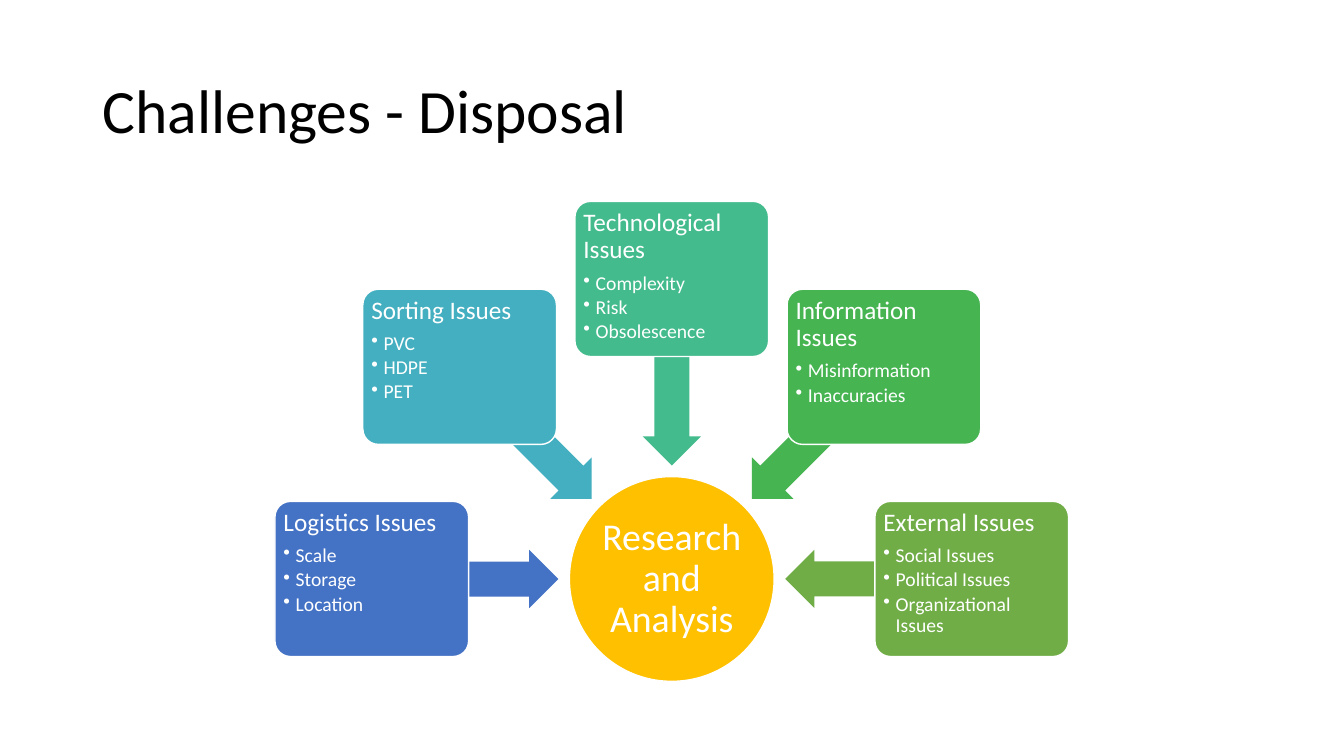
from math import cos, radians, sin

from lxml.etree import SubElement
from pptx import Presentation
from pptx.dml.color import RGBColor
from pptx.enum.shapes import MSO_SHAPE
from pptx.enum.text import MSO_ANCHOR, MSO_AUTO_SIZE, PP_ALIGN
from pptx.oxml.ns import qn
from pptx.util import Cm, Pt

FONT = "Calibri"
BLACK = RGBColor(0x00, 0x00, 0x00)
WHITE = RGBColor(0xFF, 0xFF, 0xFF)
GOLD = RGBColor(0xFF, 0xC0, 0x00)
BLUE = RGBColor(0x44, 0x72, 0xC4)
TEAL = RGBColor(0x43, 0xAF, 0xC0)
MINT = RGBColor(0x43, 0xBB, 0x8D)
GREEN = RGBColor(0x45, 0xB4, 0x51)
OLIVE = RGBColor(0x70, 0xAD, 0x47)

# Lengths in centimetres
HUB_X, HUB_Y = 16.93, 14.59
HUB_SIZE = 5.16
BOX_WIDTH, BOX_HEIGHT, BOX_RADIUS = 4.88, 3.91, 7.56
ARROW_LENGTH, ARROW_WIDTH, ARROW_RADIUS = 4.7, 1.47, 5.21
BULLET_INDENT = 0.31

ISSUES = [
    ("Logistics Issues", ["Scale", "Storage", "Location"], BLUE),
    ("Sorting Issues", ["PVC", "HDPE", "PET"], TEAL),
    ("Technological Issues", ["Complexity", "Risk", "Obsolescence"], MINT),
    ("Information Issues", ["Misinformation", "Inaccuracies"], GREEN),
    ("External Issues",
     ["Social Issues", "Political Issues", "Organizational Issues"], OLIVE),
]


def format_paragraph(para, size, color, align=PP_ALIGN.LEFT, space_after=0):
    para.alignment = align
    para.line_spacing = 0.9
    para.space_before = Pt(0)
    para.space_after = Pt(space_after)
    for span in para.runs:
        span.font.name = FONT
        span.font.size = Pt(size)
        span.font.color.rgb = color


def add_bullet(para):
    properties = para._p.get_or_add_pPr()
    properties.set("marL", str(Cm(BULLET_INDENT)))
    properties.set("indent", str(-Cm(BULLET_INDENT)))
    SubElement(properties, qn("a:buChar")).set("char", "•")


def add_title(slide, text):
    title = slide.shapes.title
    title.left, title.top = Cm(2.33), Cm(1.01)
    title.width, title.height = Cm(29.21), Cm(3.68)
    frame = title.text_frame
    frame.text = text
    frame.auto_size = MSO_AUTO_SIZE.NONE
    frame.vertical_anchor = MSO_ANCHOR.MIDDLE
    format_paragraph(frame.paragraphs[0], 44, BLACK)


def add_filled_shape(slide, kind, center, width, height, color, outlined=True):
    x, y = center
    shape = slide.shapes.add_shape(kind, Cm(x - width / 2), Cm(y - height / 2),
                                   Cm(width), Cm(height))
    shape.shadow.inherit = False
    shape.fill.solid()
    shape.fill.fore_color.rgb = color
    if outlined:
        shape.line.color.rgb = WHITE
        shape.line.width = Pt(1)
    else:
        shape.line.fill.background()
    return shape


def prepare_frame(shape, inset, anchor):
    frame = shape.text_frame
    frame.word_wrap = True
    frame.vertical_anchor = anchor
    frame.margin_left = frame.margin_right = Cm(inset)
    frame.margin_top = frame.margin_bottom = Cm(inset)
    return frame


def around_hub(angle, radius):
    """Return the point at this clockwise angle and distance from the hub."""
    return (HUB_X + radius * cos(radians(angle)),
            HUB_Y + radius * sin(radians(angle)))


def add_hub(slide, text):
    hub = add_filled_shape(slide, MSO_SHAPE.OVAL, (HUB_X, HUB_Y),
                           HUB_SIZE, HUB_SIZE, GOLD)
    frame = prepare_frame(hub, 0.05, MSO_ANCHOR.MIDDLE)
    frame.text = text
    format_paragraph(frame.paragraphs[0], 27, WHITE, PP_ALIGN.CENTER)


def add_arrow(slide, angle, color):
    arrow = add_filled_shape(slide, MSO_SHAPE.LEFT_ARROW,
                             around_hub(angle, ARROW_RADIUS),
                             ARROW_LENGTH, ARROW_WIDTH, color, outlined=False)
    arrow.adjustments[0] = 0.6
    arrow.adjustments[1] = 0.5
    arrow.rotation = angle % 360


def add_issue_box(slide, angle, heading, points, color):
    box = add_filled_shape(slide, MSO_SHAPE.ROUNDED_RECTANGLE,
                           around_hub(angle, BOX_RADIUS),
                           BOX_WIDTH, BOX_HEIGHT, color)
    box.adjustments[0] = 0.1
    frame = prepare_frame(box, 0.1, MSO_ANCHOR.TOP)
    frame.text = heading
    format_paragraph(frame.paragraphs[0], 18, WHITE, space_after=6.3)
    for point in points:
        para = frame.add_paragraph()
        para.text = point
        para.level = 1
        format_paragraph(para, 14, WHITE, space_after=2.1)
        add_bullet(para)


def main():
    deck = Presentation()
    deck.slide_width, deck.slide_height = Cm(33.87), Cm(19.05)
    slide = deck.slides.add_slide(deck.slide_layouts.get_by_name("Title Only"))
    add_title(slide, "Challenges - Disposal")
    add_hub(slide, "Research and Analysis")
    for index, (heading, points, color) in enumerate(ISSUES):
        angle = 180 + 45 * index
        add_arrow(slide, angle, color)
        add_issue_box(slide, angle, heading, points, color)
    deck.save("out.pptx")


if __name__ == "__main__":
    main()
